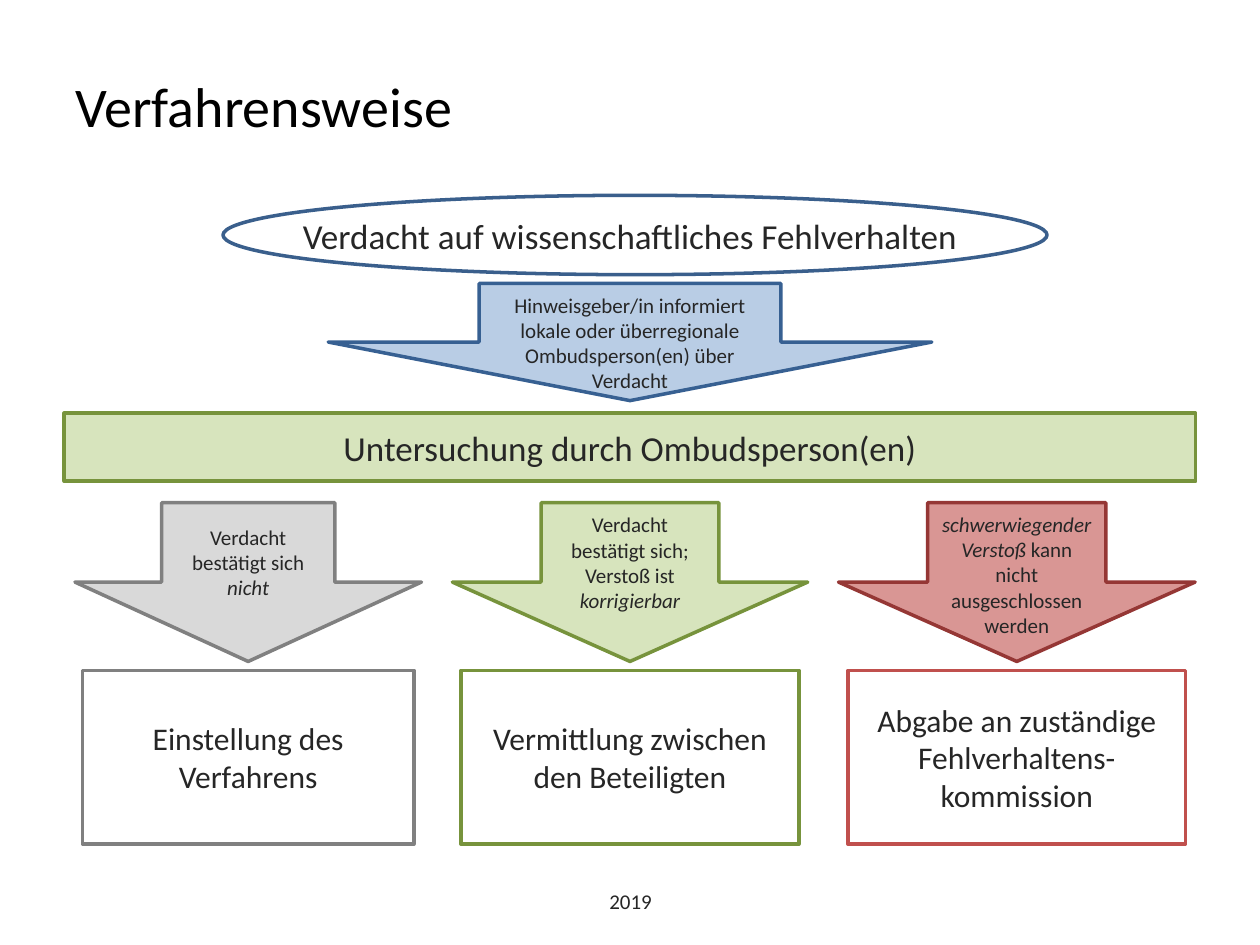
from pptx import Presentation
from pptx.dml.color import RGBColor
from pptx.enum.shapes import MSO_SHAPE
from pptx.enum.text import MSO_ANCHOR, PP_ALIGN
from pptx.util import Inches, Pt


def paint(target, colour):
    target.rgb = RGBColor.from_string(colour)


def write(box, text, size=12, colour="262626", align=PP_ALIGN.CENTER,
          anchor=MSO_ANCHOR.MIDDLE, top=0.05):
    frame = box.text_frame
    frame.word_wrap = True
    frame.vertical_anchor = anchor
    frame.margin_top = Inches(top)
    para = frame.paragraphs[0]
    para.alignment = align
    for index, part in enumerate(text.split("*")):
        if part:
            span = para.add_run()
            span.text = part
            span.font.name = "Calibri"
            span.font.size = Pt(size)
            span.font.italic = index % 2 == 1
            paint(span.font.color, colour)


deck = Presentation()
deck.slide_width, deck.slide_height = Inches(10), Inches(7.5)
column, row = deck.slide_width / 100, deck.slide_height / 100
page = deck.slides.add_slide(deck.slide_layouts[5])

title = page.shapes.title
title.left, title.top = int(5 * column), int(2.8 * row)
title.width, title.height = int(66.7 * column), int(16.67 * row)
write(title, "Verfahrensweise", size=32, colour="000000", align=PP_ALIGN.LEFT)

arrow, rectangle = MSO_SHAPE.DOWN_ARROW, MSO_SHAPE.RECTANGLE
high = {"anchor": MSO_ANCHOR.TOP, "top": 0.07}
steps = [
    (MSO_SHAPE.OVAL, 50.4, 20.67, 65.4, 8.4, None, "3A5F8C", "", {}),
    (arrow, 50, 30, 47.9, 12.4, "B9CDE5", "376092",
     "Hinweisgeber/in informiert lokale oder überregionale Ombudsperson(en) über Verdacht", high),
    (rectangle, 50, 43.73, 89.8, 7.2, "D7E4BD", "77933C",
     "Untersuchung durch Ombudsperson(en)", {"size": 20}),
]

branches = [
    (19.7, 27.5, 26.3, "D9D9D9", "808080", "808080",
     "Verdacht bestätigt sich *nicht*", {}, "Einstellung des Verfahrens"),
    (50, 28.2, 26.8, "D7E4BD", "77933C", "77933C",
     "Verdacht bestätigt sich; Verstoß ist *korrigierbar*", {},
     "Vermittlung zwischen den Beteiligten"),
    (80.7, 28.3, 26.8, "D99694", "953735", "C0504D",
     "*schwerwiegender Verstoß *kann nicht ausgeschlossen werden", high,
     "Abgabe an zuständige Fehlverhaltens-kommission"),
]
for center, arrow_width, box_width, fill, edge, box_edge, finding, style, outcome in branches:
    steps.append((arrow, center, 53.2, arrow_width, 16.8, fill, edge, finding, style))
    steps.append((rectangle, center, 70.93, box_width, 18.4, None, box_edge, outcome, {"size": 18}))

for kind, center, top, width, height, fill, edge, text, style in steps:
    shape = page.shapes.add_shape(kind, int((center - width / 2) * column), int(top * row),
                                  int(width * column), int(height * row))
    shape.shadow.inherit = False
    if fill:
        shape.fill.solid()
        paint(shape.fill.fore_color, fill)
    else:
        shape.fill.background()
    paint(shape.line.color, edge)
    shape.line.width = Pt(2)
    write(shape, text, **style)

labels = [
    (5.1, 20.93, 89.8, 8, "Verdacht auf wissenschaftliches Fehlverhalten", 20),
    (34.2, 92.67, 31.7, 5.33, "2019", 12),
]
for left, top, width, height, text, size in labels:
    label = page.shapes.add_textbox(int(left * column), int(top * row),
                                    int(width * column), int(height * row))
    write(label, text, size=size)

deck.save("out.pptx")
